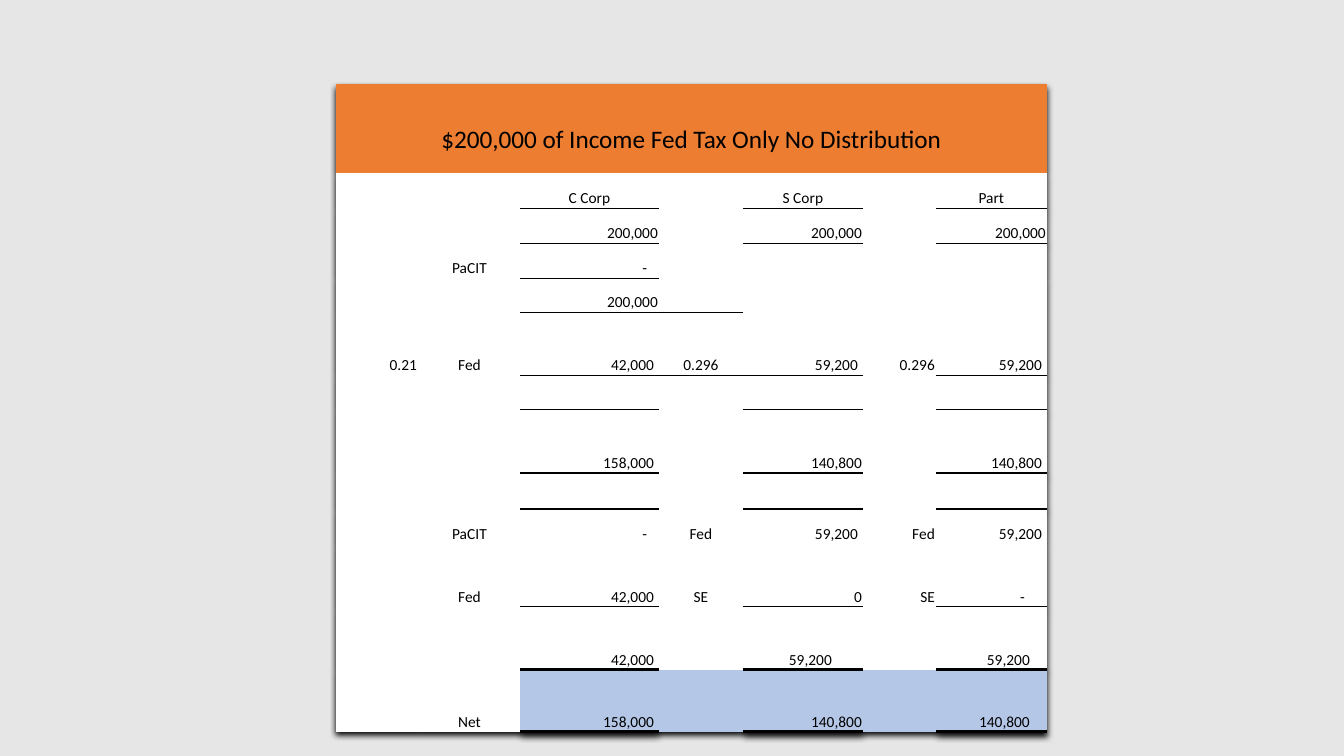
import pptx
import pptx.dml.color
import pptx.enum.text
import pptx.oxml
import pptx.oxml.ns
import pptx.util

BLACK = pptx.dml.color.RGBColor(0x00, 0x00, 0x00)
WHITE = pptx.dml.color.RGBColor(0xFF, 0xFF, 0xFF)
GREY = pptx.dml.color.RGBColor(0xE7, 0xE6, 0xE6)
ORANGE = pptx.dml.color.RGBColor(0xED, 0x7D, 0x31)
BLUE = pptx.dml.color.RGBColor(0xB4, 0xC7, 0xE7)

CENTER = pptx.enum.text.PP_ALIGN.CENTER
RIGHT = pptx.enum.text.PP_ALIGN.RIGHT
EMU_PER_PX = 914400 / 100.8
NO_GRID_STYLE = "{2D5ABB26-0587-4C30-8999-92F81FD0307C}"
NAMESPACE = pptx.oxml.ns.nsdecls("a")

COLUMNS = [83, 101, 139, 84, 120, 73, 111]
ROWS = [89, 35, 35, 35, 34, 63, 35, 63, 36, 35, 63, 63, 62]
RATE, LABEL, C_CORP, S_LABEL, S_CORP, PART_LABEL, PART = range(7)
ENTITIES = (C_CORP, S_CORP, PART)
NET_ROW = 12

TITLE = "$200,000 of Income Fed Tax Only No Distribution"
HEADINGS = {C_CORP: "C Corp", S_CORP: "S Corp", PART: "Part"}
LABELS = {
    (3, LABEL): "PaCIT",
    (5, LABEL): "Fed",
    (5, S_LABEL): "0.296",
    (9, LABEL): "PaCIT",
    (9, S_LABEL): "Fed",
    (10, LABEL): "Fed",
    (10, S_LABEL): "SE",
    (12, LABEL): "Net",
}
# Right-aligned entries: (row, column): (text, px kept free on the right)
AMOUNTS = {
    (2, C_CORP): ("200,000", 1),
    (2, S_CORP): ("200,000", 1),
    (2, PART): ("200,000", 1),
    (3, C_CORP): ("-", 12),
    (4, C_CORP): ("200,000", 1),
    (5, RATE): ("0.21", 2),
    (5, C_CORP): ("42,000", 5),
    (5, S_CORP): ("59,200", 5),
    (5, PART_LABEL): ("0.296", 1),
    (5, PART): ("59,200", 5),
    (7, C_CORP): ("158,000", 5),
    (7, S_CORP): ("140,800", 1),
    (7, PART): ("140,800", 5),
    (9, C_CORP): ("-", 12),
    (9, S_CORP): ("59,200", 5),
    (9, PART_LABEL): ("Fed", 1),
    (9, PART): ("59,200", 5),
    (10, C_CORP): ("42,000", 5),
    (10, S_CORP): ("0", 1),
    (10, PART_LABEL): ("SE", 1),
    (10, PART): ("-", 22),
    (11, C_CORP): ("42,000", 5),
    (11, S_CORP): ("59,200", 31),
    (11, PART): ("59,200", 17),
    (12, C_CORP): ("158,000", 5),
    (12, S_CORP): ("140,800", 1),
    (12, PART): ("140,800", 17),
}
# (row, columns ruled below, width in points), from top to bottom
RULES = [
    (1, ENTITIES, 0.5),
    (3, (C_CORP,), 0.5),
    (4, (S_LABEL,), 0.5),
    (5, ENTITIES, 0.5),
    (7, ENTITIES, 2),
    (10, ENTITIES, 0.5),
    (11, ENTITIES, 2),
    (12, ENTITIES, 2),
]


def px(length):
    return pptx.util.Emu(round(length * EMU_PER_PX))


class TaxSlide:
    def __init__(self, deck, font="Calibri", size=11):
        self.font = font
        self.size = size
        self.page = deck.slides.add_slide(deck.slide_layouts[6])
        self.page.background.fill.solid()
        self.page.background.fill.fore_color.rgb = GREY

    def add_grid(self, left, top):
        """Add the empty table: white cells, no style lines, soft shadow."""
        frame = self.page.shapes.add_table(
            len(ROWS), len(COLUMNS), px(left), px(top), px(sum(COLUMNS)), px(sum(ROWS)))
        self.table = frame.table
        self.table.first_row = self.table.horz_banding = False
        for column, width in zip(self.table.columns, COLUMNS):
            column.width = px(width)
        for row, height in zip(self.table.rows, ROWS):
            row.height = px(height)
        for cell in self.table.iter_cells():
            self.paint(cell, WHITE)
            cell.margin_left = cell.margin_right = cell.margin_top = px(1)
            cell.margin_bottom = 0
            cell.text_frame.paragraphs[0].font.size = pptx.util.Pt(self.size)
        properties = frame._element.graphic.graphicData.tbl.tblPr
        properties[0].text = NO_GRID_STYLE
        properties.insert(0, pptx.oxml.parse_xml(
            f'<a:effectLst {NAMESPACE}><a:outerShdw blurRad="50800" dist="38100" dir="5400000">'
            '<a:srgbClr val="000000"/></a:outerShdw></a:effectLst>'))

    def paint(self, cell, colour):
        cell.fill.solid()
        cell.fill.fore_color.rgb = colour

    def set_text(self, row, column, text, align, size=None):
        cell = self.table.cell(row, column)
        cell.vertical_anchor = pptx.enum.text.MSO_ANCHOR.BOTTOM
        para = cell.text_frame.paragraphs[0]
        para.text = text
        para.alignment = align
        para.font.name = self.font
        para.font.size = pptx.util.Pt(size or self.size)
        para.font.color.rgb = BLACK
        return cell

    def add_rule(self, row, column, width):
        """Rule the edge below a cell, on both cells that share it."""
        self.add_border(row, column, "lnB", width)
        if row + 1 < len(ROWS):
            self.add_border(row + 1, column, "lnT", width)

    def add_border(self, row, column, side, width):
        properties = self.table.cell(row, column)._tc.get_or_add_tcPr()
        borders = properties.findall(pptx.oxml.ns.qn("a:lnT"))
        properties.insert(len(borders), pptx.oxml.parse_xml(
            f'<a:{side} {NAMESPACE} w="{pptx.util.Pt(width)}"><a:solidFill>'
            f'<a:srgbClr val="{BLACK}"/></a:solidFill></a:{side}>'))


def main():
    deck = pptx.Presentation()
    deck.slide_width = px(1344)
    deck.slide_height = px(756)
    slide = TaxSlide(deck)
    slide.add_grid(336, 84)

    slide.table.cell(0, 0).merge(slide.table.cell(0, PART))
    banner = slide.set_text(0, 0, TITLE, CENTER, size=18)
    banner.margin_bottom = px(18)
    slide.paint(banner, ORANGE)

    for column, heading in HEADINGS.items():
        slide.set_text(1, column, heading, CENTER)
    for (row, column), label in LABELS.items():
        slide.set_text(row, column, label, CENTER)
    for (row, column), (amount, inset) in AMOUNTS.items():
        slide.set_text(row, column, amount, RIGHT).margin_right = px(inset)

    for column in range(C_CORP, len(COLUMNS)):
        slide.paint(slide.table.cell(NET_ROW, column), BLUE)
    for row, columns, width in RULES:
        for column in columns:
            slide.add_rule(row, column, width)
    deck.save("out.pptx")


if __name__ == "__main__":
    main()
